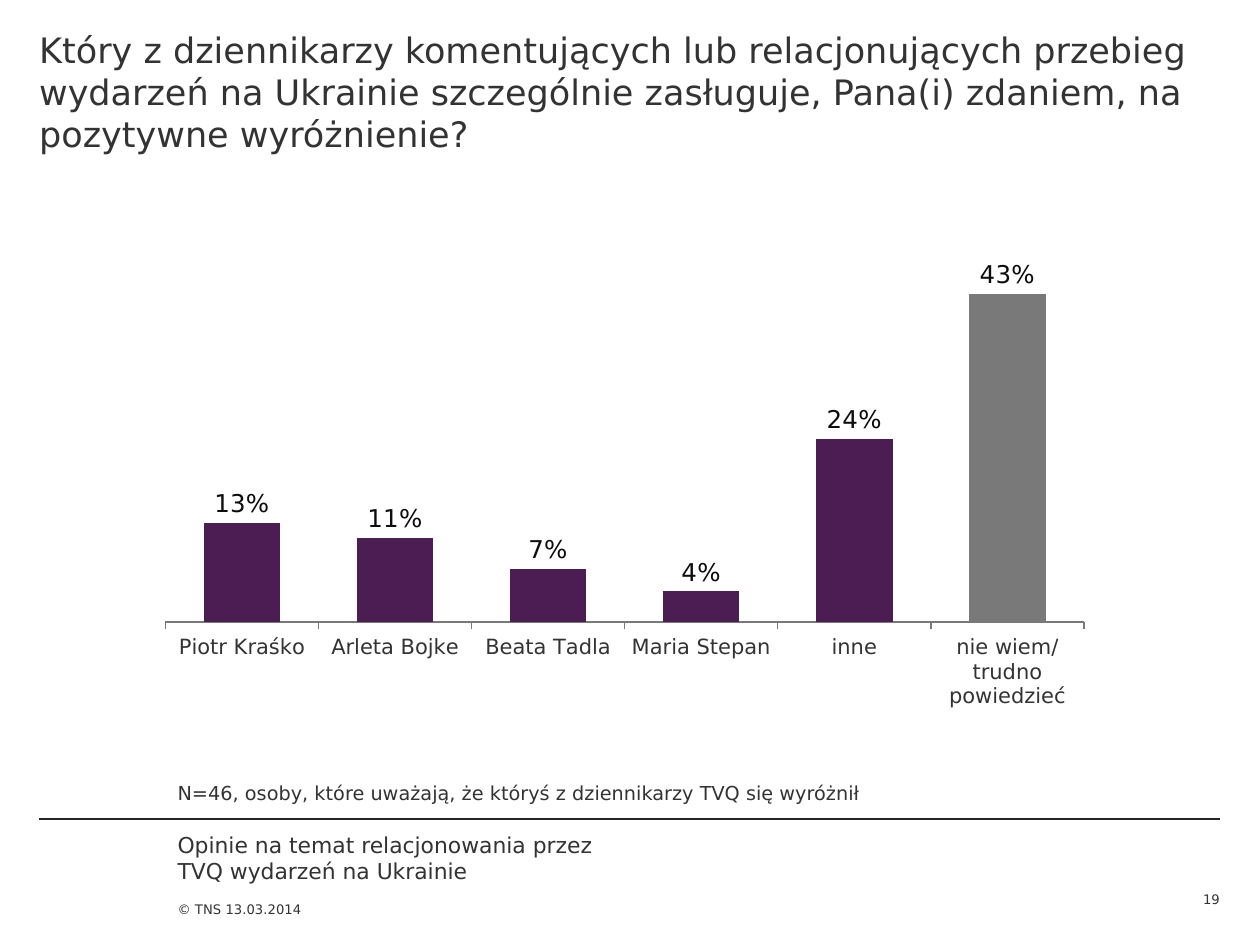
from collections import namedtuple

from lxml.etree import SubElement
from pptx import Presentation
from pptx.chart.data import CategoryChartData
from pptx.dml.color import RGBColor
from pptx.enum.chart import XL_CHART_TYPE as ChartType, XL_LABEL_POSITION as LabelPos, XL_TICK_MARK as Tick
from pptx.enum.shapes import MSO_CONNECTOR as Connector
from pptx.enum.text import MSO_ANCHOR as Anchor, PP_ALIGN as Align
from pptx.oxml.ns import qn
from pptx.util import Cm, Pt

FONT = "DejaVu Sans"
COLOURS = {"text": "333333", "rule": "262626", "label": "0D0D0D",
           "answer": "4C1D52", "undecided": "797979", "axis": "797979"}
PLOT = {"x": 0.107, "y": 0.145, "w": 0.778, "h": 0.564}
ANSWERS = {"Piotr Kraśko": 0.13, "Arleta Bojke": 0.11, "Beata Tadla": 0.07,
           "Maria Stepan": 0.04, "inne": 0.24, "nie wiem/ trudno powiedzieć": 0.43}
Box = namedtuple("Box", "left top width height")


def colour(key):
    """Return the palette colour with the given key."""
    return RGBColor.from_string(COLOURS[key])


def style(font, size, key="text"):
    """Set typeface, size and colour of a font."""
    font.name, font.size = FONT, Pt(size)
    font.color.rgb = colour(key)


def add_text(slide, box, wording, size, anchor=Anchor.TOP, align=Align.LEFT, top=0, bottom=0):
    """Place one wrapped paragraph in a box, with insets in centimetres."""
    frame = slide.shapes.add_textbox(*map(Cm, box)).text_frame
    frame.word_wrap = True
    frame.vertical_anchor = anchor
    frame.margin_left = frame.margin_right = 0
    frame.margin_top, frame.margin_bottom = Cm(top), Cm(bottom)
    paragraph = frame.paragraphs[0]
    paragraph.alignment = align
    run = paragraph.add_run()
    run.text = wording
    style(run.font, size)


def add_question(slide, box):
    """Place the survey question as the slide heading."""
    add_text(slide, box, "Który z dziennikarzy komentujących lub relacjonujących przebieg "
             "wydarzeń na Ukrainie szczególnie zasługuje, Pana(i) zdaniem, na "
             "pozytywne wyróżnienie?", 20, top=0.58)


def fix_plot_area(chart):
    """Pin the inner plot area to its share of the chart."""
    plot_area = chart._chartSpace.chart.plotArea
    layout = plot_area.find(qn("c:layout"))
    if layout is None:
        layout = SubElement(plot_area, qn("c:layout"))
        plot_area.insert(0, layout)
    manual = SubElement(layout, qn("c:manualLayout"))
    settings = {"layoutTarget": "inner", "xMode": "edge", "yMode": "edge", **PLOT}
    for tag, setting in settings.items():
        SubElement(manual, qn(f"c:{tag}")).set("val", str(setting))


def add_answers(slide, box):
    """Chart the share of each answer, with the undecided in grey."""
    shares = CategoryChartData(number_format="0%")
    shares.categories = list(ANSWERS)
    shares.add_series("Series 1", list(ANSWERS.values()))
    chart = slide.shapes.add_chart(ChartType.COLUMN_CLUSTERED, *map(Cm, box), shares).chart
    chart.has_legend = chart.has_title = False
    style(chart.font, 12)
    fix_plot_area(chart)

    share_axis = chart.value_axis
    share_axis.minimum_scale, share_axis.maximum_scale = 0, 0.5
    share_axis.has_major_gridlines = False
    share_axis.visible = False
    answer_axis = chart.category_axis
    answer_axis.major_tick_mark = Tick.OUTSIDE
    answer_axis.format.line.color.rgb = colour("axis")
    answer_axis.format.line.width = Pt(0.75)
    style(answer_axis.tick_labels.font, 12)

    plot = chart.plots[0]
    plot.gap_width = 100
    plot.vary_by_categories = False
    columns = plot.series[0]
    columns.invert_if_negative = False
    undecided = columns.points[len(ANSWERS) - 1]
    for part, key in ((columns, "answer"), (undecided, "undecided")):
        part.format.fill.solid()
        part.format.fill.fore_color.rgb = colour(key)
    labels = columns.data_labels
    labels.show_value = True
    labels.position = LabelPos.OUTSIDE_END
    labels.number_format, labels.number_format_is_linked = "0%", False
    style(labels.font, 14, "label")


def add_sample_note(slide, box):
    """Place the note on the sample size."""
    add_text(slide, box, "N=46, osoby, które uważają, że któryś z dziennikarzy TVQ się wyróżnił",
             11, Anchor.MIDDLE)


def add_footer(slide, box):
    """Draw the rule with the report name, copyright line and page number below."""
    left, top, width, _ = box
    right, indent = left + width, left + 2.79
    rule = slide.shapes.add_connector(Connector.STRAIGHT, Cm(left), Cm(top), Cm(right), Cm(top))
    rule.line.color.rgb = colour("rule")
    rule.line.width = Pt(0.75)
    SubElement(rule._element.spPr, qn("a:effectLst"))
    add_text(slide, Box(indent, top + 0.25, 8.41, 1.07),
             "Opinie na temat relacjonowania przez TVQ wydarzeń na Ukrainie", 12.5)
    add_text(slide, Box(indent, top + 1.07, 7.06, 1.47), "© TNS 13.03.2014", 7.5,
             Anchor.BOTTOM, bottom=0.79)
    add_text(slide, Box(right - 1.4, top + 1.07, 1.4, 0.71), "19", 7.5,
             Anchor.BOTTOM, Align.RIGHT)


def main():
    """Build the slide and save it."""
    deck = Presentation()
    deck.slide_width, deck.slide_height = Cm(25.4), Cm(19.05)
    slide = deck.slides.add_slide(deck.slide_layouts[6])
    add_footer(slide, Box(0.79, 16.51, 23.8, 2.54))
    add_question(slide, Box(0.79, 0, 23.8, 2.87))
    add_answers(slide, Box(0.79, 2.87, 23.8, 13.64))
    add_sample_note(slide, Box(3.58, 15.47, 21.03, 1.04))
    deck.save("out.pptx")


if __name__ == "__main__":
    main()
